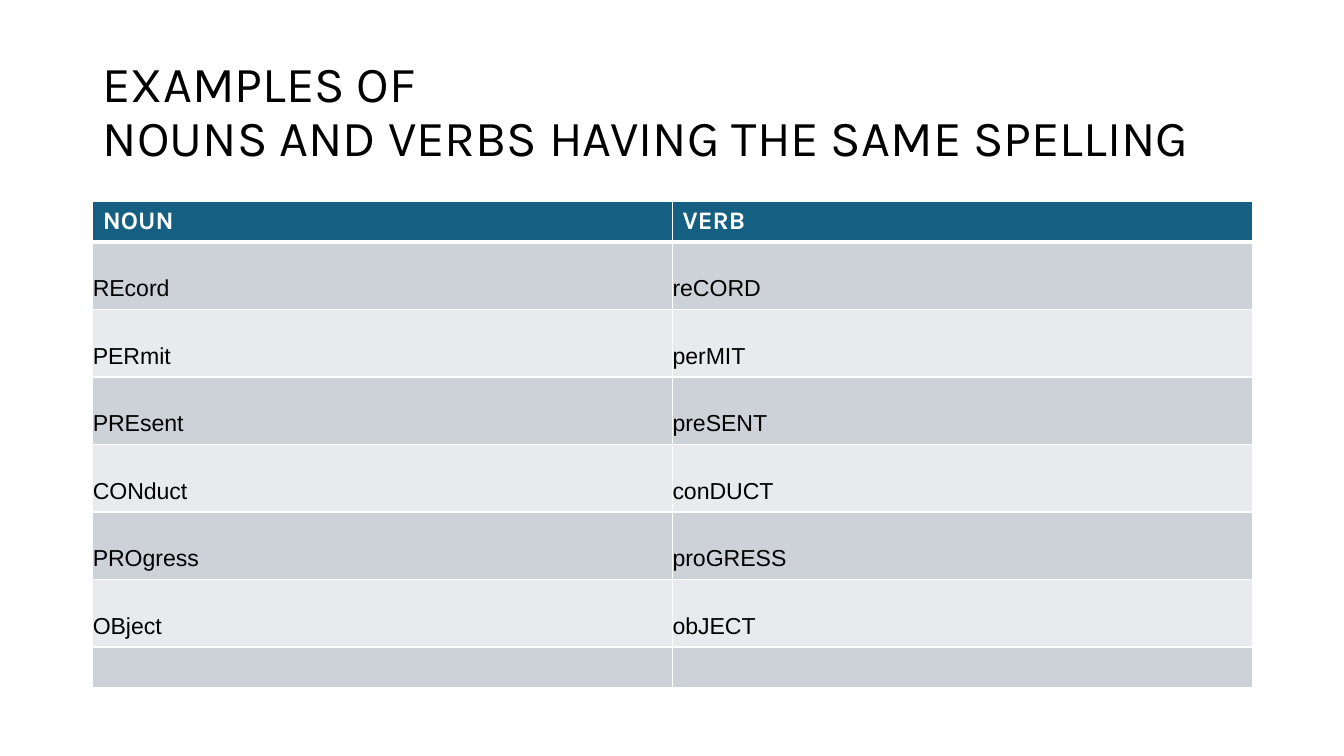
from dataclasses import dataclass

from lxml.etree import SubElement
from pptx import Presentation
from pptx.dml.color import RGBColor
from pptx.enum.text import MSO_ANCHOR
from pptx.oxml.ns import qn
from pptx.table import _Cell
from pptx.text.text import TextFrame
from pptx.util import Inches, Pt

COLORS = {
    "text": "000000",
    "white": "FFFFFF",
    "header": "156082",
    "dark_band": "CCD2D8",
    "light_band": "E8EAED",
}
HEADER_HEIGHT, WORD_HEIGHT = 0.4, 0.63
LEFT, WIDTH = 0.92, 11.5


@dataclass
class WordPair:
    noun: str
    verb: str


HEADINGS = WordPair("NOUN", "VERB")
WORD_PAIRS = [
    WordPair("REcord", "reCORD"),
    WordPair("PERmit", "perMIT"),
    WordPair("PREsent", "preSENT"),
    WordPair("CONduct", "conDUCT"),
    WordPair("PROgress", "proGRESS"),
    WordPair("OBject", "obJECT"),
    WordPair("", ""),
]


def write_text(frame: TextFrame, text: str, *, font: str, size: float,
               color: str = "text", bold: bool = False,
               line_spacing: float = 1.0, space_after: float = 0) -> None:
    paragraph = frame.paragraphs[0]
    paragraph.text = text
    paragraph.line_spacing = line_spacing
    paragraph.space_after = Pt(space_after)
    for run in paragraph.runs:
        run.font.name = font
        run.font.size = Pt(size)
        run.font.bold = bold
        run.font.color.rgb = RGBColor.from_string(COLORS[color])


def style_cell(cell: _Cell, fill: str, top: float, bottom: float) -> None:
    """Set white borders (widths in points) and a solid fill."""
    properties = cell._tc.get_or_add_tcPr()
    for side, width in (("L", 1), ("R", 1), ("T", top), ("B", bottom)):
        line = SubElement(properties, qn(f"a:ln{side}"), w=str(Pt(width)))
        solid = SubElement(line, qn("a:solidFill"))
        SubElement(solid, qn("a:srgbClr"), val=COLORS["white"])
    cell.fill.solid()
    cell.fill.fore_color.rgb = RGBColor.from_string(COLORS[fill])


def write_word(cell: _Cell, word: str) -> None:
    cell.vertical_anchor = MSO_ANCHOR.MIDDLE
    cell.margin_left = cell.margin_right = 0
    cell.margin_top = cell.margin_bottom = Inches(0.06)
    write_text(cell.text_frame, word, font="Arial", size=16.5,
               line_spacing=2.0, space_after=8)


def main() -> None:
    presentation = Presentation()
    presentation.slide_width = Inches(13.33)
    presentation.slide_height = Inches(7.5)
    slide = presentation.slides.add_slide(presentation.slide_layouts[6])

    # Title
    title = slide.shapes.add_textbox(
        Inches(LEFT), Inches(0.4), Inches(WIDTH), Inches(1.45)).text_frame
    title.word_wrap = True
    title.vertical_anchor = MSO_ANCHOR.MIDDLE
    write_text(title, "EXAMPLES OF\vNOUNS AND VERBS HAVING THE SAME SPELLING",
               font="Karla", size=36, line_spacing=0.9)

    # Table of word pairs
    rows = [HEADINGS, *WORD_PAIRS]
    heights = [WORD_HEIGHT if pair in WORD_PAIRS and pair.noun
               else HEADER_HEIGHT for pair in rows]
    table = slide.shapes.add_table(
        len(rows), 2, Inches(LEFT), Inches(2), Inches(WIDTH),
        Inches(sum(heights))).table
    table.first_row = False
    table.horz_banding = False

    for index, (pair, height) in enumerate(zip(rows, heights)):
        table.rows[index].height = Inches(height)
        band = "dark_band" if index % 2 else "light_band"
        for column, word in enumerate((pair.noun, pair.verb)):
            cell = table.cell(index, column)
            if index == 0:
                style_cell(cell, "header", 1, 3)
                write_text(cell.text_frame, word, font="Karla", size=18,
                           color="white", bold=True)
            else:
                style_cell(cell, band, 3 if index == 1 else 1, 1)
                if word:
                    write_word(cell, word)

    presentation.save("out.pptx")


if __name__ == "__main__":
    main()
